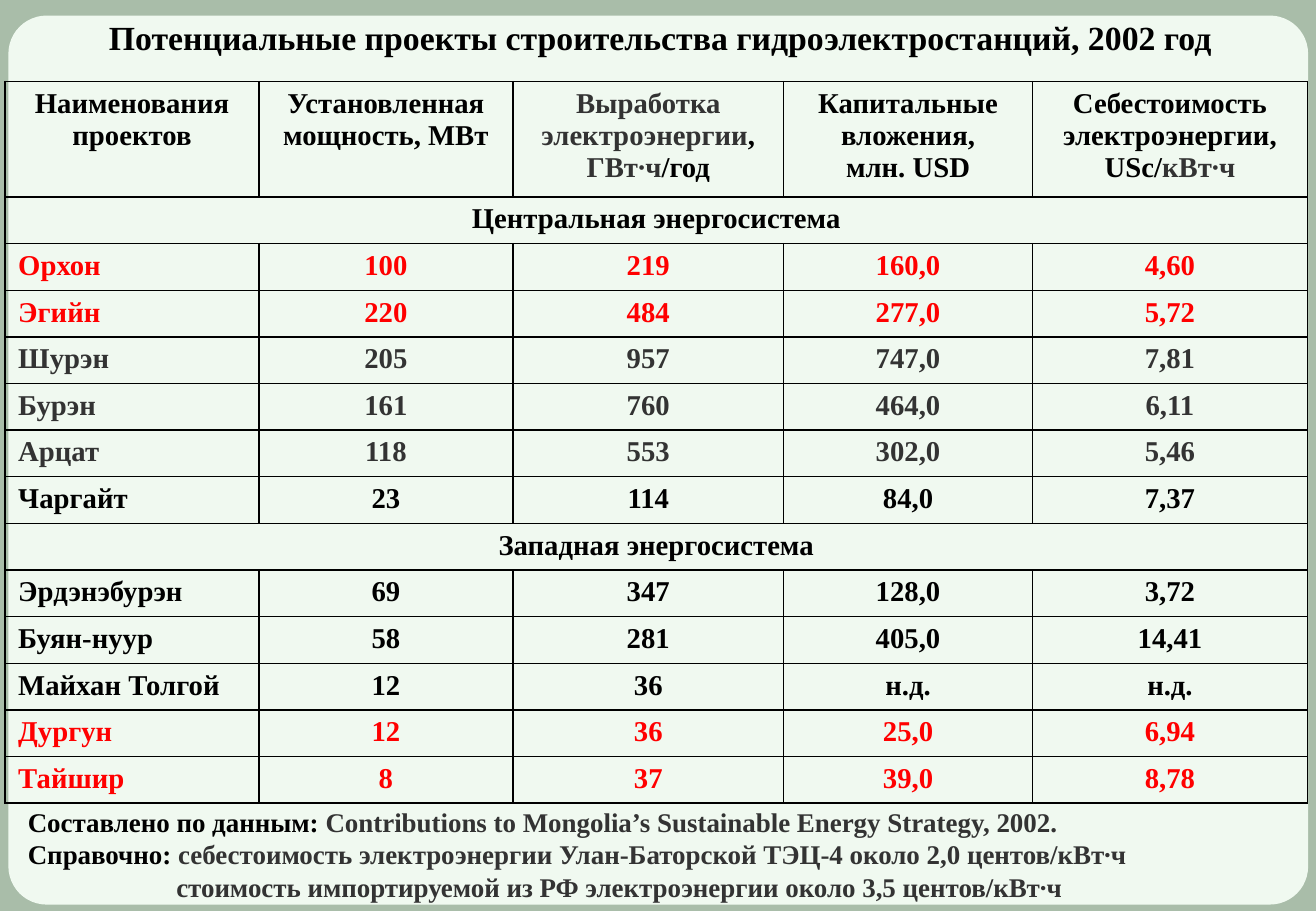
from dataclasses import dataclass
from typing import NamedTuple

from lxml.etree import SubElement
from pptx import Presentation
from pptx.dml.color import RGBColor
from pptx.enum.shapes import MSO_SHAPE
from pptx.enum.text import MSO_ANCHOR, PP_ALIGN
from pptx.oxml.ns import qn
from pptx.util import Pt

COLORS = {
    "backdrop": "A9BDA9",
    "panel": "F0F9F0",
    "black": "000000",
    "gray": "333333",
    "red": "FF0000",
}
FONT = "Times New Roman"


class Run(NamedTuple):
    text: str
    color: str = "black"


@dataclass(frozen=True)
class Line:
    runs: tuple[Run, ...]
    indent: float = 0


@dataclass(frozen=True)
class Project:
    name: str
    capacity: str
    output: str
    investment: str
    cost: str
    color: str = "black"

    def values(self) -> tuple[str, ...]:
        return self.name, self.capacity, self.output, self.investment, self.cost


@dataclass(frozen=True)
class PowerSystem:
    title: str
    projects: tuple[Project, ...]


def line(text: str, color: str = "black") -> Line:
    return Line((Run(text, color),))


TITLE = "Потенциальные проекты строительства гидроэлектростанций, 2002 год"
HEADINGS = (
    (line("Наименования проектов"),),
    (line("Установленная мощность, МВт"),),
    (
        Line((Run("Выработка электроэнергии", "gray"), Run(","))),
        Line((Run("ГВт∙ч", "gray"), Run("/год"))),
    ),
    (line("Капитальные вложения,"), line("млн. USD")),
    (
        line("Себестоимость электроэнергии,"),
        Line((Run("USc/"), Run("кВт∙ч", "gray"))),
    ),
)
SYSTEMS = (
    PowerSystem("Центральная энергосистема", (
        Project("Орхон", "100", "219", "160,0", "4,60", "red"),
        Project("Эгийн", "220", "484", "277,0", "5,72", "red"),
        Project("Шурэн", "205", "957", "747,0", "7,81", "gray"),
        Project("Бурэн", "161", "760", "464,0", "6,11", "gray"),
        Project("Арцат", "118", "553", "302,0", "5,46", "gray"),
        Project("Чаргайт", "23", "114", "84,0", "7,37"),
    )),
    PowerSystem("Западная энергосистема", (
        Project("Эрдэнэбурэн", "69", "347", "128,0", "3,72"),
        Project("Буян-нуур", "58", "281", "405,0", "14,41"),
        Project("Майхан Толгой", "12", "36", "н.д.", "н.д."),
        Project("Дургун", "12", "36", "25,0", "6,94", "red"),
        Project("Тайшир", "8", "37", "39,0", "8,78", "red"),
    )),
)
SOURCES = (
    Line((
        Run("Составлено по данным: "),
        Run("Contributions to Mongolia’s Sustainable Energy Strategy, 2002.", "gray"),
    )),
    Line((
        Run("Справочно: "),
        Run("себестоимость электроэнергии Улан-Баторской ТЭЦ-4 около 2,0 центов/кВт∙ч", "gray"),
    )),
    Line((Run("стоимость импортируемой из РФ электроэнергии около 3,5 центов/кВт∙ч", "gray"),), 88),
)
COLUMN_WIDTHS = (150.5, 150.5, 160.5, 147.5, 163)
HEADING_HEIGHT, ROW_HEIGHT = 68.4, 27.6


def rgb(name: str) -> RGBColor:
    return RGBColor.from_string(COLORS[name])


def write_text(frame, lines, *, size: float, align=PP_ALIGN.CENTER) -> None:
    frame.word_wrap = True
    for index, content in enumerate(lines):
        paragraph = frame.add_paragraph() if index else frame.paragraphs[0]
        paragraph.alignment = align
        if content.indent:
            paragraph._p.get_or_add_pPr().set("marL", str(Pt(content.indent)))
        for part in content.runs:
            run = paragraph.add_run()
            run.text = part.text
            run.font.name = FONT
            run.font.size = Pt(size)
            run.font.bold = True
            run.font.color.rgb = rgb(part.color)


def add_text(slide, box: tuple[float, ...], lines, **text_format) -> None:
    frame = slide.shapes.add_textbox(*map(Pt, box)).text_frame
    frame.vertical_anchor = MSO_ANCHOR.MIDDLE
    write_text(frame, lines, **text_format)


def style_cell(cell) -> None:
    cell.margin_left = cell.margin_right = Pt(7.8)
    cell.margin_top = cell.margin_bottom = Pt(3.6)
    properties = cell._tc.get_or_add_tcPr()
    for side in ("a:lnL", "a:lnR", "a:lnT", "a:lnB"):
        border = SubElement(properties, qn(side), w=str(Pt(1)))
        fill = SubElement(border, qn("a:solidFill"))
        SubElement(fill, qn("a:srgbClr"), val=COLORS["black"])
    cell.fill.background()


def add_panel(slide) -> None:
    panel = slide.shapes.add_shape(
        MSO_SHAPE.ROUNDED_RECTANGLE, Pt(5), Pt(9.2), Pt(770.4), Pt(527)
    )
    panel.adjustments[0] = 0.043
    panel.shadow.inherit = False
    panel.fill.solid()
    panel.fill.fore_color.rgb = rgb("panel")
    panel.line.fill.background()


def add_projects(slide) -> None:
    row_count = 1 + sum(1 + len(system.projects) for system in SYSTEMS)
    height = HEADING_HEIGHT + ROW_HEIGHT * (row_count - 1)
    table = slide.shapes.add_table(
        row_count, len(COLUMN_WIDTHS), Pt(3), Pt(48.3), Pt(sum(COLUMN_WIDTHS)), Pt(height)
    ).table
    table.first_row = table.horz_banding = False
    for column, width in zip(table.columns, COLUMN_WIDTHS):
        column.width = Pt(width)
    for index, row in enumerate(table.rows):
        row.height = Pt(ROW_HEIGHT if index else HEADING_HEIGHT)
        for cell in row.cells:
            style_cell(cell)

    for column, heading in enumerate(HEADINGS):
        write_text(table.cell(0, column).text_frame, heading, size=17)
    row = 1
    for system in SYSTEMS:
        band = table.cell(row, 0)
        band.merge(table.cell(row, len(COLUMN_WIDTHS) - 1))
        write_text(band.text_frame, [line(system.title)], size=17)
        for row, project in enumerate(system.projects, row + 1):
            for column, value in enumerate(project.values()):
                write_text(
                    table.cell(row, column).text_frame,
                    [line(value, project.color)],
                    size=17,
                    align=PP_ALIGN.CENTER if column else PP_ALIGN.LEFT,
                )
        row += 1


def main() -> None:
    deck = Presentation()
    deck.slide_width, deck.slide_height = Pt(780), Pt(540)
    slide = deck.slides.add_slide(deck.slide_layouts[6])
    slide.background.fill.solid()
    slide.background.fill.fore_color.rgb = rgb("backdrop")
    add_panel(slide)
    add_text(slide, (29.5, 6.5, 724.3, 31), [line(TITLE)], size=20)
    add_projects(slide)
    add_text(slide, (9.4, 473.8, 755.3, 64.8), SOURCES, size=16, align=PP_ALIGN.JUSTIFY)
    deck.save("out.pptx")


if __name__ == "__main__":
    main()
